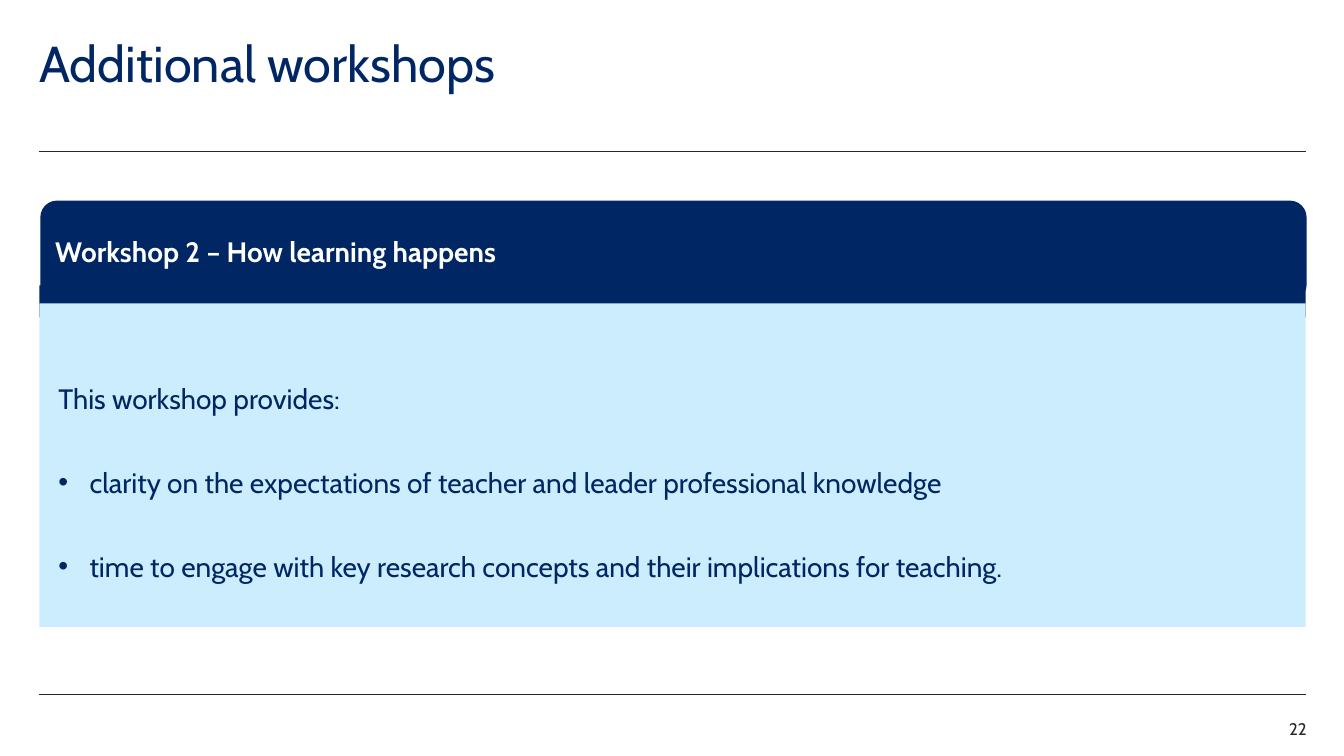
from dataclasses import dataclass

from lxml.etree import SubElement
from pptx import Presentation
from pptx.dml.color import RGBColor
from pptx.enum.shapes import MSO_CONNECTOR, MSO_SHAPE
from pptx.enum.text import MSO_ANCHOR, PP_ALIGN
from pptx.oxml.ns import qn
from pptx.shapes.autoshape import Shape
from pptx.slide import Slide
from pptx.util import Inches, Pt

COLOURS = {"navy": "002664", "sky": "CBEDFD", "ink": "22272B", "white": "FFFFFF"}
FONT = "Cabin"
LEFT, RIGHT = 0.39, 12.95
PANEL_WIDTH = RIGHT - LEFT
RULE_TOPS = (1.5, 6.89)


@dataclass
class Panel:
    kind: MSO_SHAPE
    left: float
    top: float
    height: float
    fill: str
    lines: tuple[str, ...] = ()
    colour: str = "navy"
    bold: bool = False


@dataclass
class Label:
    text: str
    left: float
    top: float
    width: float
    height: float
    size: int
    colour: str
    align: PP_ALIGN = PP_ALIGN.LEFT
    line_spacing: float = 1.0


HEADER = Panel(MSO_SHAPE.ROUNDED_RECTANGLE, 0.4, 1.99, 1, "navy",
               ("Workshop 2 – How learning happens",), "white", True)
HEADER_BASE = Panel(MSO_SHAPE.RECTANGLE, LEFT, 2.83, 0.32, "navy")
BODY = Panel(MSO_SHAPE.RECTANGLE, LEFT, 3.01, 3.21, "sky", (
    "This workshop provides:",
    "clarity on the expectations of teacher and leader professional knowledge",
    "time to engage with key research concepts and their implications for teaching.",
))
LABELS = (
    Label("Additional workshops", LEFT, 0.39, 11.02, 0.6, 36, "navy", line_spacing=0.9),
    Label("22", 12.17, 7.13, 0.79, 0.2, 12, "ink", PP_ALIGN.RIGHT),
)


def rgb(name: str) -> RGBColor:
    return RGBColor.from_string(COLOURS[name])


def style_text(box: Shape, size: int, colour: str, align: PP_ALIGN, bold: bool = False) -> None:
    for para in box.text_frame.paragraphs:
        para.alignment = align
        for span in para.runs:
            span.font.name = FONT
            span.font.size = Pt(size)
            span.font.bold = bold
            span.font.color.rgb = rgb(colour)


def draw_rule(page: Slide, top: float) -> None:
    rule = page.shapes.add_connector(
        MSO_CONNECTOR.STRAIGHT, Inches(LEFT), Inches(top), Inches(RIGHT), Inches(top))
    rule.line.color.rgb = rgb("ink")
    rule.line.width = Pt(0.5)
    SubElement(rule.element.spPr, qn("a:effectLst"))


def draw_panel(page: Slide, panel: Panel) -> Shape:
    box = page.shapes.add_shape(panel.kind, Inches(panel.left), Inches(panel.top),
                                Inches(PANEL_WIDTH), Inches(panel.height))
    box.shadow.inherit = False
    box.fill.solid()
    box.fill.fore_color.rgb = rgb(panel.fill)
    box.line.fill.background()
    if panel.lines:
        box.text_frame.text = "\n".join(panel.lines)
        box.text_frame.vertical_anchor = MSO_ANCHOR.MIDDLE
        style_text(box, 20, panel.colour, PP_ALIGN.LEFT, panel.bold)
    return box


def format_list(box: Shape) -> None:
    for index, para in enumerate(box.text_frame.paragraphs):
        para.line_spacing = 2.0
        para.space_after = Pt(12)
        properties = para._p.get_or_add_pPr()
        properties.set("marL", str(Inches(0.4)))
        properties.set("indent", str(Inches(-0.31)))
        if index > 0:
            SubElement(properties, qn("a:buFont"), typeface="Arial")
            SubElement(properties, qn("a:buChar"), char="•")


def draw_label(page: Slide, label: Label) -> None:
    box = page.shapes.add_textbox(Inches(label.left), Inches(label.top),
                                  Inches(label.width), Inches(label.height))
    frame = box.text_frame
    frame.word_wrap = True
    frame.margin_left = frame.margin_right = frame.margin_top = frame.margin_bottom = 0
    frame.text = label.text
    frame.paragraphs[0].line_spacing = label.line_spacing
    style_text(box, label.size, label.colour, label.align)


def main() -> None:
    deck = Presentation()
    deck.slide_width, deck.slide_height = Inches(13.33), Inches(7.5)
    page = deck.slides.add_slide(deck.slide_layouts[6])

    # Rules above and below the content
    for top in RULE_TOPS:
        draw_rule(page, top)

    # Workshop card
    draw_panel(page, HEADER)
    draw_panel(page, HEADER_BASE)
    format_list(draw_panel(page, BODY))

    # Title and page number
    for label in LABELS:
        draw_label(page, label)

    deck.save("out.pptx")


if __name__ == "__main__":
    main()
